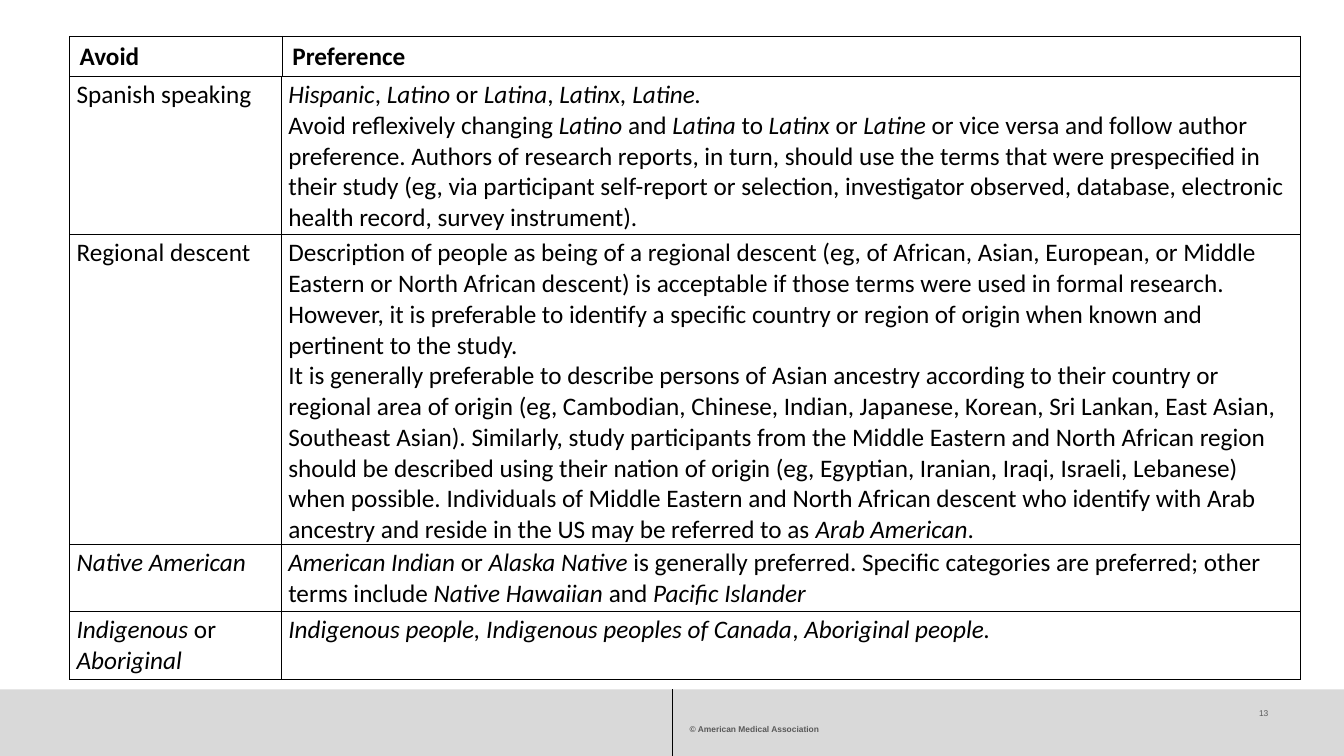
from lxml.etree import SubElement
from pptx import Presentation
from pptx.dml.color import RGBColor
from pptx.enum.shapes import MSO_CONNECTOR as Connector, MSO_SHAPE as Shape
from pptx.enum.text import PP_ALIGN as Align
from pptx.oxml import parse_xml
from pptx.oxml.ns import nsdecls, qn
from pptx.util import Inches, Pt

COLORS = {"ink": "000000", "footer": "D9D9D9", "note": "595959"}

# Paragraphs are list items; asterisks enclose italic text.
TERMS = [
    (["Spanish speaking"],
     ["*Hispanic*, *Latino* or *Latina*, *Latinx, Latine.*",
      "Avoid reflexively changing *Latino* and *Latina* to *Latinx* or *Latine* or vice versa "
      "and follow author preference. Authors of research reports, in turn, should use the terms "
      "that were prespecified in their study (eg, via participant self-report or selection, "
      "investigator observed, database, electronic health record, survey instrument)."]),
    (["Regional descent"],
     ["Description of people as being of a regional descent (eg, of African, Asian, European, "
      "or Middle Eastern or North African descent) is acceptable if those terms were used in "
      "formal research. However, it is preferable to identify a specific country or region of "
      "origin when known and pertinent to the study.",
      "It is generally preferable to describe persons of Asian ancestry according to their "
      "country or regional area of origin (eg, Cambodian, Chinese, Indian, Japanese, Korean, "
      "Sri Lankan, East Asian, Southeast Asian). Similarly, study participants from the Middle "
      "Eastern and North African region should be described using their nation of origin (eg, "
      "Egyptian, Iranian, Iraqi, Israeli, Lebanese) when possible. Individuals of Middle Eastern "
      "and North African descent who identify with Arab ancestry and reside in the US may be "
      "referred to as *Arab American*."]),
    (["*Native American*"],
     ["*American Indian* or *Alaska Native* is generally preferred. Specific categories are "
      "preferred; other terms include *Native Hawaiian* and *Pacific Islander*"]),
    (["*Indigenous* or", "*Aboriginal*"],
     ["*Indigenous people, Indigenous peoples of Canada*, *Aboriginal people.*"]),
]


class SlideBuilder:
    def __init__(self, page):
        self.page = page

    def color(self, name):
        return RGBColor.from_string(COLORS[name])

    def add_text(self, frame, paragraphs, size, font, color, bold=False, align=Align.LEFT):
        for index, text in enumerate(paragraphs):
            para = frame.paragraphs[0] if index == 0 else frame.add_paragraph()
            para.alignment = align
            for part, words in enumerate(text.split("*")):
                if words:
                    span = para.add_run()
                    span.text = words
                    span.font.name, span.font.size = font, Pt(size)
                    span.font.bold, span.font.italic = bold, part % 2 == 1
                    span.font.color.rgb = self.color(color)

    def band(self, left, top, width, height):
        band = self.page.shapes.add_shape(
            Shape.RECTANGLE, Inches(left), Inches(top), Inches(width), Inches(height))
        band.shadow.inherit = False
        band.fill.solid()
        band.fill.fore_color.rgb = self.color("footer")
        band.line.fill.background()

    def divider(self, x, top, bottom):
        line = self.page.shapes.add_connector(
            Connector.STRAIGHT, Inches(x), Inches(top), Inches(x), Inches(bottom))
        line.line.color.rgb = self.color("ink")
        line.line.width = Pt(0.25)
        SubElement(line._element.spPr, qn("a:effectLst"))

    def note(self, text, left, top, width, height, bold=False, align=Align.LEFT):
        box = self.page.shapes.add_textbox(
            Inches(left), Inches(top), Inches(width), Inches(height))
        frame = box.text_frame
        frame.word_wrap = True
        frame.margin_left = frame.margin_right = frame.margin_top = frame.margin_bottom = 0
        self.add_text(frame, [text], 6, "Arial", "note", bold, align)

    def outline(self, cell):
        """Draw thin lines on all four sides of a cell."""
        cell.fill.background()
        properties = cell._tc.get_or_add_tcPr()
        for index, side in enumerate("LRTB"):
            properties.insert(index, parse_xml(
                f'<a:ln{side} {nsdecls("a")} w="{Pt(0.75)}"><a:solidFill>'
                f'<a:srgbClr val="{COLORS["ink"]}"/></a:solidFill></a:ln{side}>'))

    def table(self, rows, left, top, widths, heights, side_margin, top_margin, bold=False):
        table = self.page.shapes.add_table(
            len(rows), len(widths), Inches(left), Inches(top),
            Inches(sum(widths)), Inches(sum(heights))).table
        table.first_row = table.horz_banding = False
        for column, width in zip(table.columns, widths):
            column.width = Inches(width)
        for row, height, texts in zip(table.rows, heights, rows):
            row.height = Inches(height)
            for cell, paragraphs in zip(row.cells, texts):
                cell.margin_left = cell.margin_right = Inches(side_margin)
                cell.margin_top = cell.margin_bottom = Inches(top_margin)
                self.outline(cell)
                self.add_text(cell.text_frame, paragraphs, 18, "Calibri", "ink", bold)


def main():
    deck = Presentation()
    deck.slide_width, deck.slide_height = Inches(13.33), Inches(7.5)
    builder = SlideBuilder(deck.slides.add_slide(deck.slide_layouts[6]))
    builder.band(0, 6.84, 13.33, 0.66)
    builder.divider(6.67, 6.84, 7.5)
    builder.note("© American Medical Association", 6.84, 7.18, 4.5, 0.1, bold=True)
    builder.note("13", 11.83, 7.03, 0.75, 0.4, align=Align.RIGHT)
    builder.table(TERMS, 0.69, 0.76, [2.1, 10.11], [1.57, 3.07, 0.67, 0.67], 0.07, 0.03)
    builder.table([(["Avoid"], ["Preference"])], 0.69, 0.36, [2.11, 10.1], [0.4],
                  0.1, 0.05, bold=True)
    deck.save("out.pptx")


if __name__ == "__main__":
    main()
